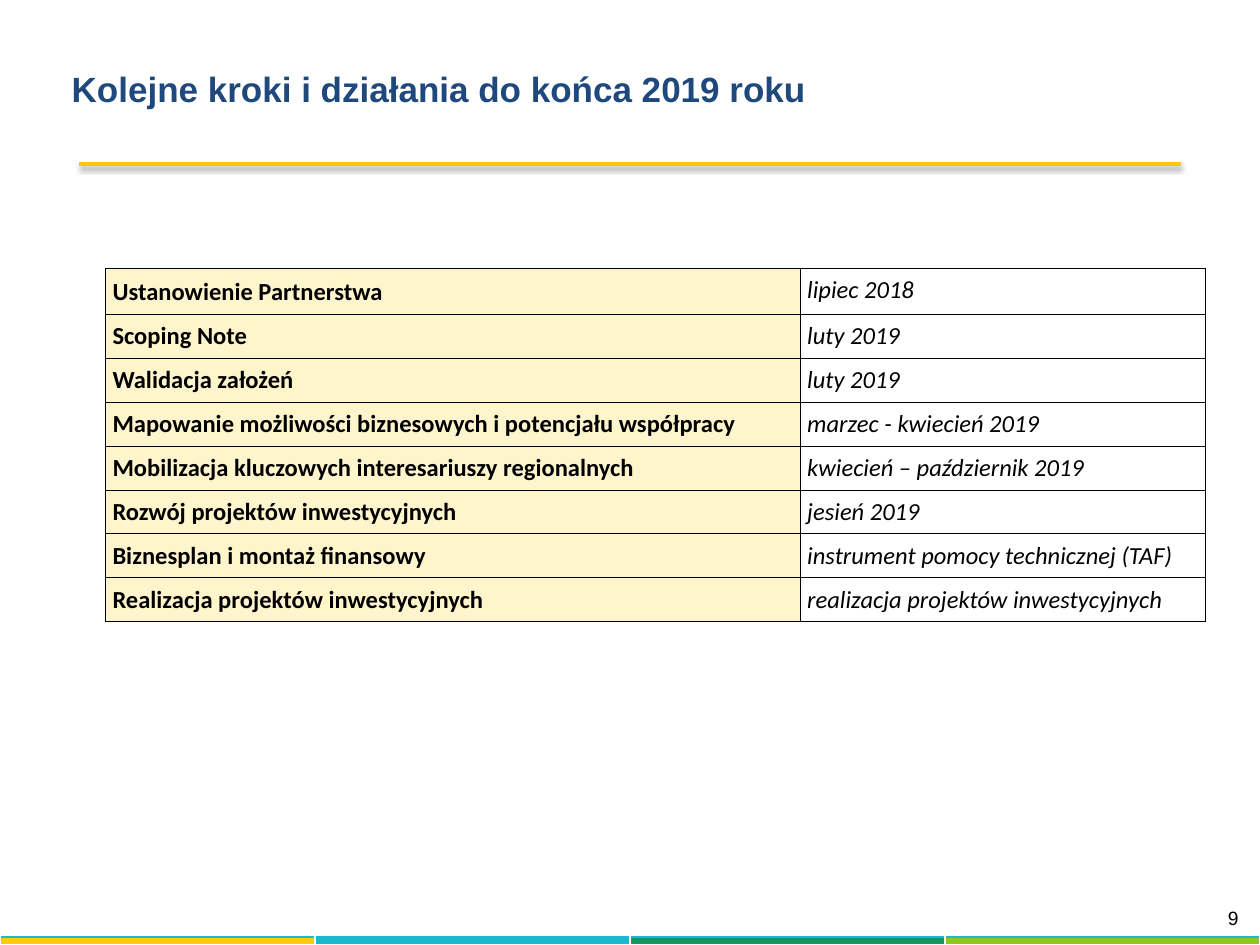
from lxml.etree import SubElement
from pptx import Presentation
from pptx.dml.color import RGBColor
from pptx.enum.shapes import MSO_CONNECTOR
from pptx.enum.text import MSO_ANCHOR, PP_ALIGN
from pptx.oxml.ns import qn
from pptx.util import Pt

NAVY = RGBColor(0x1F, 0x49, 0x7D)
GOLD = RGBColor(0xFD, 0xC6, 0x09)
CREAM = RGBColor(0xFF, 0xF5, 0xCC)
BLACK = RGBColor(0, 0, 0)
YELLOW = RGBColor(0xFF, 0xCC, 0x00)
TEAL = RGBColor(0x1C, 0xB8, 0xCF)
GREEN = RGBColor(0x15, 0x99, 0x61)
LIME = RGBColor(0x98, 0xC2, 0x22)

SLIDE_WIDTH, SLIDE_HEIGHT = 720, 540
STRIP_HEIGHT = 4.5
STAGE_ROW_HEIGHTS = [26.5] + [25.08] * 7

TITLE_FONT = {"name": "Arial", "size": Pt(20), "bold": True}
NUMBER_FONT = {"name": "Arial", "size": Pt(11)}
STAGE_FONT = {"name": "Calibri", "size": Pt(14), "bold": True}
DATE_FONT = {"name": "Calibri", "size": Pt(14), "bold": False, "italic": True}

STAGES = [
    ("Ustanowienie Partnerstwa", "lipiec 2018"),
    ("Scoping Note", "luty 2019"),
    ("Walidacja założeń", "luty 2019"),
    ("Mapowanie możliwości biznesowych i potencjału współpracy",
     "marzec - kwiecień 2019"),
    ("Mobilizacja kluczowych interesariuszy regionalnych",
     "kwiecień – październik 2019"),
    ("Rozwój projektów inwestycyjnych", "jesień 2019"),
    ("Biznesplan i montaż finansowy", "instrument pomocy technicznej (TAF)"),
    ("Realizacja projektów inwestycyjnych",
     "realizacja projektów inwestycyjnych"),
]


def set_margins(holder, margin):
    for side in ("left", "top", "right", "bottom"):
        setattr(holder, f"margin_{side}", Pt(margin))


def write(frame, wording, font_values, color):
    paragraph = frame.paragraphs[0]
    run = paragraph.add_run()
    run.text = wording
    for attribute, value in font_values.items():
        setattr(run.font, attribute, value)
    run.font.color.rgb = color
    return paragraph


def add_label(slide, box, wording, font_values, color, **frame_values):
    frame = slide.shapes.add_textbox(*map(Pt, box)).text_frame
    set_margins(frame, 3.6)
    for attribute, value in frame_values.items():
        setattr(frame, attribute, value)
    return write(frame, wording, font_values, color)


def add_plain_table(slide, left, top, widths, heights):
    """Add a table without header or banding, sized by its columns and rows."""
    table = slide.shapes.add_table(
        len(heights), len(widths), Pt(left), Pt(top),
        Pt(sum(widths)), Pt(sum(heights))).table
    table.first_row = table.horz_banding = False
    for column, width in zip(table.columns, widths):
        column.width = Pt(width)
    for row, height in zip(table.rows, heights):
        row.height = Pt(height)
    return table


def fill_cell(cell, color):
    if color is None:
        cell.fill.background()
    else:
        cell.fill.solid()
        cell.fill.fore_color.rgb = color


def add_borders(cell, edges, color, width):
    """Put borders on the edges, ahead of the cell's fill as the schema asks."""
    properties = cell._tc.get_or_add_tcPr()
    for position, edge in enumerate(edges):
        border = SubElement(properties, qn(f"a:ln{edge}"), w=str(Pt(width)))
        solid = SubElement(border, qn("a:solidFill"))
        SubElement(solid, qn("a:srgbClr"), val=str(color))
        properties.insert(position, border)


def add_stage_table(slide):
    table = add_plain_table(slide, 60.3, 153.3, [397, 231.6], STAGE_ROW_HEIGHTS)
    column_formats = [(STAGE_FONT, CREAM), (DATE_FONT, None)]
    for row, stage in zip(table.rows, STAGES):
        for cell, wording, (font_values, fill) in zip(
                row.cells, stage, column_formats):
            set_margins(cell, 4)
            fill_cell(cell, fill)
            add_borders(cell, "LRTB", BLACK, 0.5)
            write(cell.text_frame, wording, font_values, BLACK)
    table.cell(0, 0).text_frame.paragraphs[0].line_spacing = 1.08


def add_color_strip(slide):
    colors = [YELLOW, TEAL, GREEN, LIME]
    widths = [SLIDE_WIDTH / len(colors)] * len(colors)
    table = add_plain_table(slide, 0, SLIDE_HEIGHT - STRIP_HEIGHT, widths,
                            [STRIP_HEIGHT])
    for cell, color in zip(table.rows[0].cells, colors):
        set_margins(cell, 0)
        fill_cell(cell, color)
        add_borders(cell, "T", TEAL, 1.5)
        # An empty cell is as tall as its end-of-paragraph text size.
        paragraph = cell.text_frame.paragraphs[0]._p
        SubElement(paragraph, qn("a:endParaRPr"), sz="100")


def add_title_rule(slide):
    rule = slide.shapes.add_connector(
        MSO_CONNECTOR.STRAIGHT, Pt(45.4), Pt(93.8), Pt(674.6), Pt(93.8))
    rule.line.color.rgb = GOLD
    rule.line.width = Pt(2)
    effects = SubElement(rule._element.spPr, qn("a:effectLst"))
    shadow = SubElement(effects, qn("a:outerShdw"), blurRad=str(Pt(3)),
                        dist=str(Pt(1.8)), dir="5400000", rotWithShape="0")
    tint = SubElement(shadow, qn("a:srgbClr"), val=str(BLACK))
    SubElement(tint, qn("a:alpha"), val="35000")


def main():
    presentation = Presentation()
    presentation.slide_width = Pt(SLIDE_WIDTH)
    presentation.slide_height = Pt(SLIDE_HEIGHT)
    slide = presentation.slides.add_slide(presentation.slide_layouts[6])

    add_color_strip(slide)
    page_number = add_label(slide, (697, 514.5, 14.4, 18.7), "9", NUMBER_FONT,
                            BLACK, word_wrap=False)
    page_number.alignment = PP_ALIGN.RIGHT
    add_stage_table(slide)
    add_label(slide, (37.4, 35, 521.3, 31.7),
              "Kolejne kroki i działania do końca 2019 roku", TITLE_FONT, NAVY,
              word_wrap=True, vertical_anchor=MSO_ANCHOR.MIDDLE)
    add_title_rule(slide)

    presentation.save("out.pptx")


if __name__ == "__main__":
    main()
